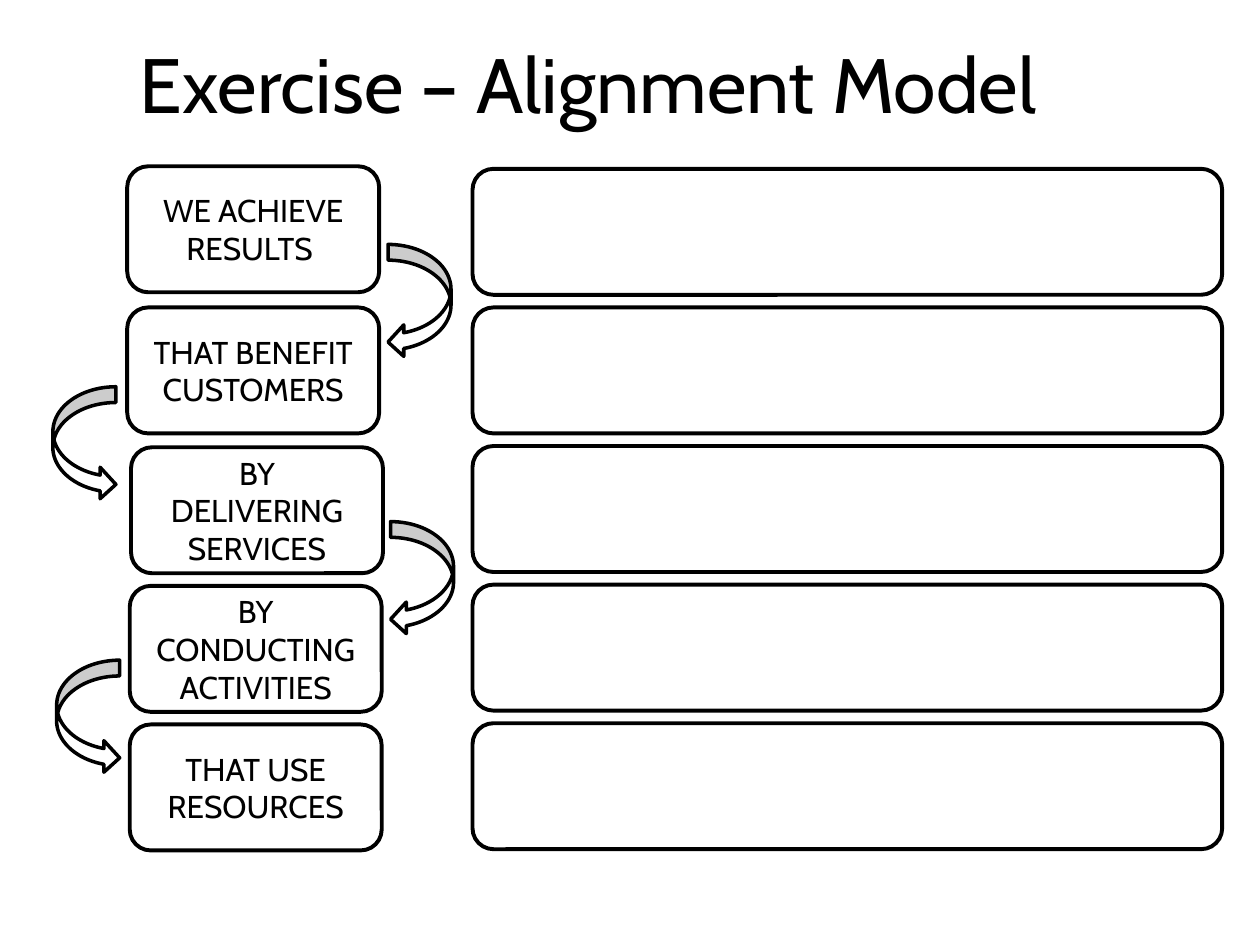
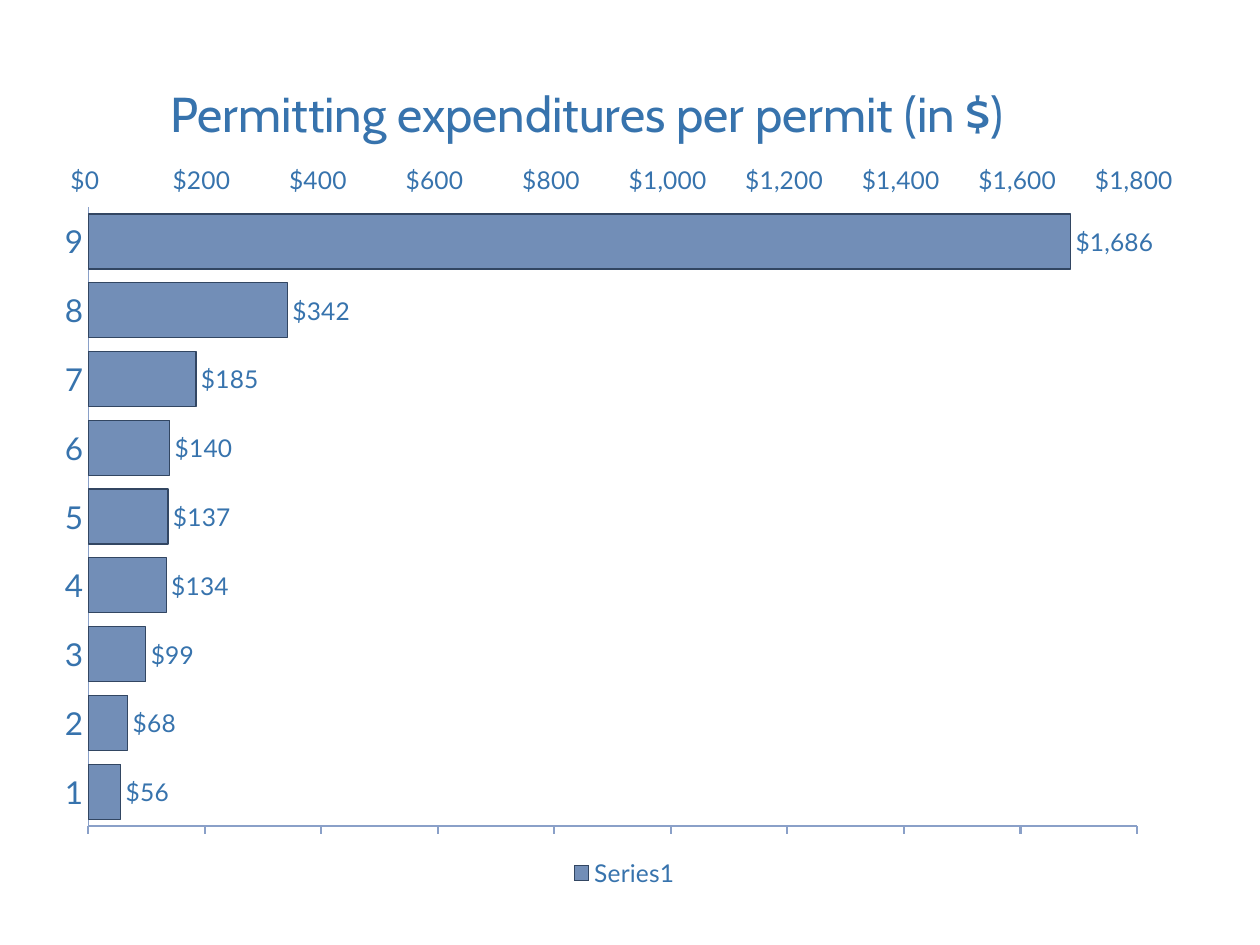
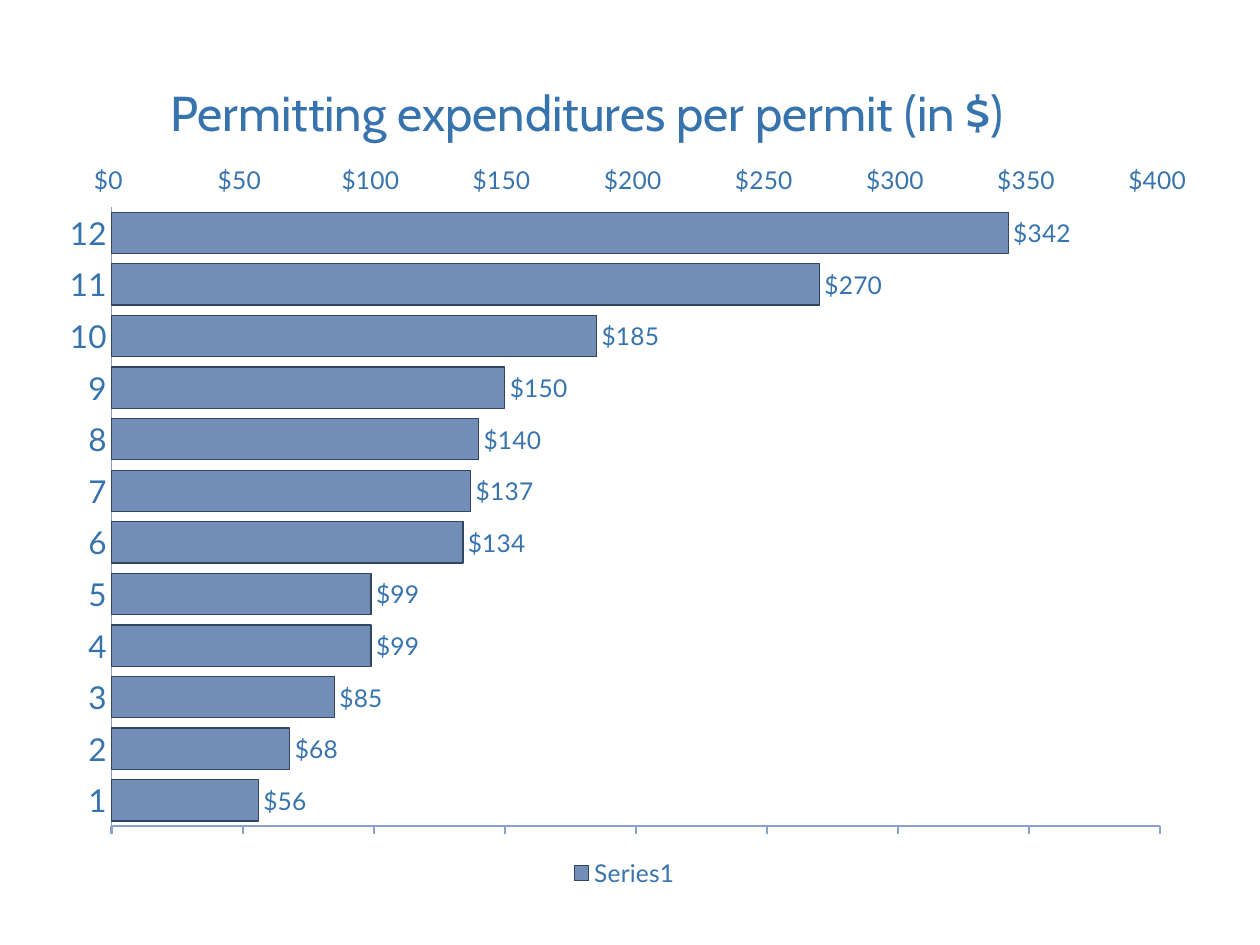
"""Build three slides: an alignment exercise and two permit cost charts."""
from dataclasses import dataclass
from typing import Any

from pptx import Presentation
from pptx.chart.data import CategoryChartData
from pptx.dml.color import RGBColor
from pptx.enum.chart import (XL_CHART_TYPE, XL_LABEL_POSITION, XL_LEGEND_POSITION,
                             XL_TICK_LABEL_POSITION, XL_TICK_MARK)
from pptx.enum.shapes import MSO_SHAPE
from pptx.enum.text import MSO_ANCHOR, MSO_AUTO_SIZE, PP_ALIGN
from pptx.oxml import parse_xml
from pptx.oxml.ns import nsdecls
from pptx.util import Inches, Pt

COLORS = {"paper": "FFFFFF", "ink": "000000", "blue": "3773AD", "bar": "728EB7",
          "bar_edge": "324662", "axis": "8AA0C8"}
TITLE_FONT = "Cabin"
CHART_FONT = "Lato"
DOLLARS = r'"$"#,##0_);[Red]\("$"#,##0\)'
COST_TITLE = "Permitting expenditures per permit (in $)"


@dataclass(frozen=True)
class Title:
    """A slide heading with its place and style."""
    text: str
    left: float
    top: float
    width: float
    height: float
    size: int
    color: str


@dataclass(frozen=True)
class Step:
    """A labelled box of the alignment model."""
    text: str
    left: float
    top: float


@dataclass(frozen=True)
class Turn:
    """A curved arrow that leads from one step to the next."""
    preset: MSO_SHAPE
    left: float
    top: float


@dataclass(frozen=True)
class CostChart:
    """The costs on one chart slide with its scale and plot place."""
    title_top: float
    costs: tuple[int, ...]
    maximum: int
    unit: int
    plot_left: float
    plot_width: float


STEPS = (
    Step("WE ACHIEVE RESULTS ", 1.01, 1.32),
    Step("THAT BENEFIT CUSTOMERS", 1.01, 2.44),
    Step("BY DELIVERING SERVICES", 1.04, 3.55),
    Step("BY CONDUCTING ACTIVITIES", 1.03, 4.65),
    Step("THAT USE RESOURCES", 1.03, 5.75),
)
TURNS = (
    Turn(MSO_SHAPE.CURVED_LEFT_ARROW, 3.08, 1.94),
    Turn(MSO_SHAPE.CURVED_RIGHT_ARROW, 0.42, 3.07),
    Turn(MSO_SHAPE.CURVED_LEFT_ARROW, 3.1, 4.14),
    Turn(MSO_SHAPE.CURVED_RIGHT_ARROW, 0.45, 5.24),
)
COST_CHARTS = (
    CostChart(0.52, (56, 68, 99, 134, 137, 140, 185, 342, 1686), 1800, 200, 0.04, 0.9),
    CostChart(0.51, (56, 68, 85, 99, 99, 134, 137, 140, 150, 185, 270, 342),
              400, 50, 0.06, 0.9),
)


def apply(target: Any, values: dict[str, Any]) -> None:
    """Set each named attribute on the target."""
    for name, value in values.items():
        setattr(target, name, value)


def rgb(color: str) -> RGBColor:
    """Return the palette colour of that name."""
    return RGBColor.from_string(COLORS[color])


def style_font(font: Any, name: str, size: int, color: str) -> None:
    """Give a font its face, size and colour."""
    apply(font, {"name": name, "size": Pt(size)})
    font.color.rgb = rgb(color)


def style_line(line: Any, color: str, width: float) -> None:
    """Give a line its colour and width."""
    line.color.rgb = rgb(color)
    line.width = Pt(width)


def add_titled_slide(prs: Any, title: Title) -> Any:
    """Add a slide whose title placeholder is moved and formatted."""
    slide = prs.slides.add_slide(prs.slide_layouts[5])
    heading = slide.shapes.title
    apply(heading, {"left": Inches(title.left), "top": Inches(title.top),
                    "width": Inches(title.width), "height": Inches(title.height)})
    frame = heading.text_frame
    frame.text = title.text
    apply(frame, {"auto_size": MSO_AUTO_SIZE.NONE, "word_wrap": True,
                  "vertical_anchor": MSO_ANCHOR.MIDDLE})
    paragraph = frame.paragraphs[0]
    paragraph.alignment = PP_ALIGN.LEFT
    style_font(paragraph.runs[0].font, TITLE_FONT, title.size, title.color)
    return slide


def add_outline(slide: Any, preset: MSO_SHAPE, left: float, top: float,
                width: float, height: float, weight: float) -> Any:
    """Add a white preset shape with a black outline."""
    outline = slide.shapes.add_shape(preset, Inches(left), Inches(top),
                                     Inches(width), Inches(height))
    outline.shadow.inherit = False
    outline.fill.solid()
    outline.fill.fore_color.rgb = rgb("paper")
    style_line(outline.line, "ink", weight)
    return outline


def add_step(slide: Any, step: Step) -> None:
    """Add a labelled step box."""
    box = add_outline(slide, MSO_SHAPE.ROUNDED_RECTANGLE, step.left, step.top, 2, 1, 2.25)
    frame = box.text_frame
    frame.text = step.text
    apply(frame, {"word_wrap": True, "vertical_anchor": MSO_ANCHOR.MIDDLE})
    paragraph = frame.paragraphs[0]
    paragraph.alignment = PP_ALIGN.CENTER
    style_font(paragraph.runs[0].font, TITLE_FONT, 18, "ink")


def add_exercise_slide(prs: Any) -> None:
    """Add the alignment model with an answer box for each step."""
    slide = add_titled_slide(
        prs, Title("Exercise – Alignment Model", 1.01, 0.33, 8.99, 0.65, 44, "ink"))
    for row, step in enumerate(STEPS):
        add_outline(slide, MSO_SHAPE.ROUNDED_RECTANGLE, 3.75, 1.34 + 1.1 * row, 5.95, 1, 2.25)
        add_step(slide, step)
    for turn in TURNS:
        add_outline(slide, turn.preset, turn.left, turn.top, 0.5, 0.9, 2)


def place_plot(chart: Any, left: float, top: float, width: float, height: float) -> None:
    """Fix the inner plot area as fractions of the chart."""
    plot_area = chart.element.xpath("c:chart/c:plotArea")[0]
    for layout in plot_area.xpath("c:layout"):
        plot_area.remove(layout)
    places = "".join(f'<c:{tag} val="{value}"/>' for tag, value in
                     zip("xywh", (left, top, width, height)))
    plot_area.insert(0, parse_xml(
        f'<c:layout {nsdecls("c")}><c:manualLayout><c:layoutTarget val="inner"/>'
        f'<c:xMode val="edge"/><c:yMode val="edge"/>{places}'
        '</c:manualLayout></c:layout>'))


def format_axes(chart: Any, cost_chart: CostChart) -> None:
    """Format the permit axis and the dollar axis."""
    permits, dollars = chart.category_axis, chart.value_axis
    apply(permits, {"major_tick_mark": XL_TICK_MARK.NONE, "has_major_gridlines": False,
                    "minor_tick_mark": XL_TICK_MARK.NONE})
    apply(dollars, {"major_tick_mark": XL_TICK_MARK.OUTSIDE, "has_major_gridlines": False,
                    "minor_tick_mark": XL_TICK_MARK.NONE, "minimum_scale": 0,
                    "maximum_scale": cost_chart.maximum, "major_unit": cost_chart.unit,
                    "tick_label_position": XL_TICK_LABEL_POSITION.HIGH})
    apply(dollars.tick_labels, {"number_format": DOLLARS, "number_format_is_linked": False})
    for axis, size, weight in ((permits, 18, 0.5), (dollars, 14, 1.25)):
        style_font(axis.tick_labels.font, CHART_FONT, size, "blue")
        style_line(axis.format.line, "axis", weight)


def add_cost_slide(prs: Any, cost_chart: CostChart) -> None:
    """Add a slide with a bar chart of costs per permit."""
    slide = add_titled_slide(
        prs, Title(COST_TITLE, 1.25, cost_chart.title_top, 8.75, 0.75, 28, "blue"))
    costs = CategoryChartData(number_format=DOLLARS)
    costs.categories = [str(rank) for rank in range(1, len(cost_chart.costs) + 1)]
    costs.add_series("Series1", cost_chart.costs)
    chart = slide.shapes.add_chart(XL_CHART_TYPE.BAR_CLUSTERED, Inches(0.33), Inches(1.17),
                                   Inches(9.25), Inches(5.92), costs).chart
    apply(chart, {"has_title": False, "has_legend": True})
    style_font(chart.font, CHART_FONT, 18, "blue")
    apply(chart.legend, {"position": XL_LEGEND_POSITION.BOTTOM, "include_in_layout": False})
    style_font(chart.legend.font, CHART_FONT, 14, "blue")
    format_axes(chart, cost_chart)

    plot = chart.plots[0]
    apply(plot, {"gap_width": 25, "vary_by_categories": False, "has_data_labels": True})
    apply(plot.data_labels, {"show_value": True, "number_format": DOLLARS,
                             "number_format_is_linked": False,
                             "position": XL_LABEL_POSITION.OUTSIDE_END})
    style_font(plot.data_labels.font, CHART_FONT, 14, "blue")
    bars = plot.series[0].format
    bars.fill.solid()
    bars.fill.fore_color.rgb = rgb("bar")
    style_line(bars.line, "bar_edge", 0.75)
    place_plot(chart, cost_chart.plot_left, 0.08, cost_chart.plot_width, 0.83)


def main() -> None:
    """Build and save the presentation."""
    prs = Presentation()
    apply(prs, {"slide_width": Inches(10), "slide_height": Inches(7.5)})
    add_exercise_slide(prs)
    for cost_chart in COST_CHARTS:
        add_cost_slide(prs, cost_chart)
    prs.save("out.pptx")


if __name__ == "__main__":
    main()
